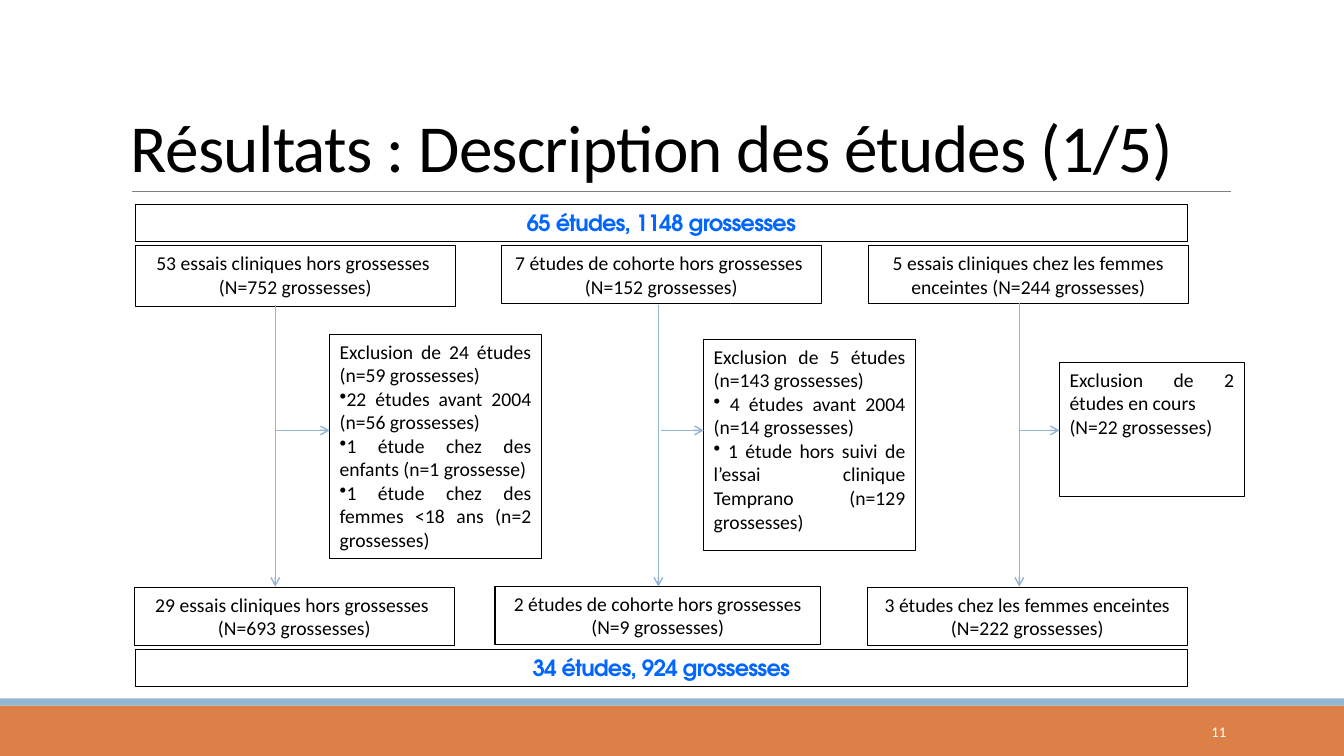
from lxml import etree
from pptx import Presentation
from pptx import util as u
from pptx.dml.color import RGBColor
from pptx.enum import shapes, text
from pptx.oxml import ns

BLACK, WHITE, BLUE, ORANGE = "000000", "FFFFFF", "94B6D2", "DD8047"
ALIGN = text.PP_ALIGN
ANCHOR = text.MSO_ANCHOR
BULLET = "•"

COLUMNS = [
    dict(
        start=((1.34, 2.44, 3.18, 0.6),
               ["53 essais cliniques hors grossesses ", "(N=752 grossesses)"]),
        exclusion=((3.27, 3.32, 2.1, 2.22),
                   ["Exclusion de 24 études (n=59 grossesses)",
                    "•22 études avant 2004 (n=56 grossesses)",
                    "•1 étude chez des enfants (n=1 grossesse)",
                    "•1 étude chez des femmes <18 ans (n=2 grossesses)"]),
        end=((1.33, 5.83, 3.18, 0.57),
             ["29 essais cliniques hors grossesses ", "(N=693 grossesses)"]),
        stem=(2.73, 3.03), branch=2.73),
    dict(
        start=((4.97, 2.44, 3.18, 0.57),
               ["7 études de cohorte hors grossesses ", "(N=152 grossesses)"]),
        exclusion=((6.98, 3.37, 2.1, 2.09),
                   ["Exclusion de 5 études (n=143 grossesses)",
                    "• 4 études avant 2004 (n=14 grossesses)",
                    "• 1 étude hors suivi de l’essai clinique Temprano (n=129 grossesses)"]),
        end=((4.91, 5.82, 3.23, 0.57),
             ["2 études de cohorte hors grossesses", "(N=9 grossesses)"]),
        stem=(6.53, 3.03), branch=6.56),
    dict(
        start=((8.61, 2.44, 3.18, 0.57),
               ["5 essais cliniques chez les femmes enceintes (N=244 grossesses)"]),
        exclusion=((10.51, 3.6, 1.83, 1.33),
                   ["Exclusion de 2 études en cours", "(N=22 grossesses)"]),
        end=((8.6, 5.83, 3.18, 0.57),
             ["3 études chez les femmes enceintes", "(N=222 grossesses)"]),
        stem=(10.11, 3.01), branch=10.11),
]


def color(value):
    """Turn a hex string into a colour."""
    return RGBColor.from_string(value)


def inches(values):
    """Turn numbers into lengths."""
    return [u.Inches(value) for value in values]


def write(shape, lines, size=14, font="Calibri", ink=BLACK, align=ALIGN.CENTER,
          anchor=ANCHOR.TOP, bold=False, tracking=None, spacing=None):
    """Fill a shape with paragraphs, bulleting those that begin with a bullet."""
    frame = shape.text_frame
    frame.word_wrap = True
    frame.vertical_anchor = anchor
    frame.text = "\n".join(line.removeprefix(BULLET) for line in lines)
    for line, para in zip(lines, frame.paragraphs):
        para.alignment = align
        if spacing:
            para.line_spacing = spacing
        if line.startswith(BULLET):
            bullet = etree.SubElement(para._p.get_or_add_pPr(), ns.qn("a:buChar"))
            bullet.set("char", BULLET)
        for span in para.runs:
            span.font.size = u.Pt(size)
            span.font.name = font
            span.font.bold = bold
            span.font.color.rgb = color(ink)
            if tracking:
                span._r.get_or_add_rPr().set("spc", str(round(tracking * 100)))


def add_box(page, at, fill=WHITE, outline=BLACK):
    """Draw a flat rectangle."""
    box = page.shapes.add_shape(shapes.MSO_SHAPE.RECTANGLE, *inches(at))
    box.shadow.inherit = False
    box.fill.solid()
    box.fill.fore_color.rgb = color(fill)
    if outline:
        box.line.color.rgb = color(outline)
        box.line.width = u.Pt(0.75)
    else:
        box.line.fill.background()
    return box


def add_line(page, start, end, ink=BLUE, width=1, arrow=True):
    """Draw a straight line, with an open arrowhead at its end if asked."""
    line = page.shapes.add_connector(
        shapes.MSO_CONNECTOR.STRAIGHT, *inches(start + end))
    line.line.color.rgb = color(ink)
    line.line.width = u.Pt(width)
    if arrow:
        head = etree.SubElement(line.line._get_or_add_ln(), ns.qn("a:tailEnd"))
        head.set("type", "arrow")
    etree.SubElement(line._element.spPr, ns.qn("a:effectLst"))


def add_footer(page, top, width, number):
    """Draw the two coloured bands and the slide number."""
    add_box(page, (0, top + 0.07, width, 0.5), ORANGE, None)
    add_box(page, (0, top, width, 0.07), BLUE, None)
    label = page.shapes.add_textbox(*inches((10.83, top + 0.13, 1.43, 0.4)))
    write(label, [number], 10.5, ink=WHITE, align=ALIGN.RIGHT, anchor=ANCHOR.MIDDLE)


def add_title(page, at, title):
    """Place the title above its rule."""
    left, top, width, height = at
    box = page.shapes.add_textbox(*inches(at))
    write(box, [title], 48, align=ALIGN.LEFT, anchor=ANCHOR.BOTTOM,
          tracking=-0.5, spacing=0.85)
    rule = top + height
    add_line(page, (left + 0.11, rule), (left + width + 0.01, rule), "808080", 0.5, False)


def add_total(page, top, label):
    """Draw a full-width total bar."""
    write(add_box(page, (1.34, top, 10.44, 0.37)), [label], 16,
          "TeX Gyre Adventor", "0066FF", bold=True, tracking=-0.5)


def add_column(page, start, exclusion, end, stem, branch, branch_top=4.27):
    """Draw one flow from its first studies, past exclusions, to those kept."""
    for (at, lines), align in ((start, ALIGN.CENTER), (exclusion, ALIGN.JUSTIFY),
                               (end, ALIGN.CENTER)):
        write(add_box(page, at), lines, align=align)
    add_line(page, stem, (stem[0], 5.82))
    add_line(page, (branch, branch_top), (exclusion[0][0], branch_top))


def main():
    """Build the study selection slide."""
    deck = Presentation()
    deck.slide_width, deck.slide_height = inches((13.33, 7.5))
    page = deck.slides.add_slide(deck.slide_layouts[6])
    add_footer(page, 6.93, 13.33, "11")
    add_title(page, (1.2, 0.31, 11, 1.59), "Résultats : Description des études (1/5)")
    add_total(page, 2.03, "65 études, 1148 grossesses")
    for column in COLUMNS:
        add_column(page, **column)
    add_total(page, 6.44, "34 études, 924 grossesses")
    deck.save("out.pptx")


if __name__ == "__main__":
    main()
